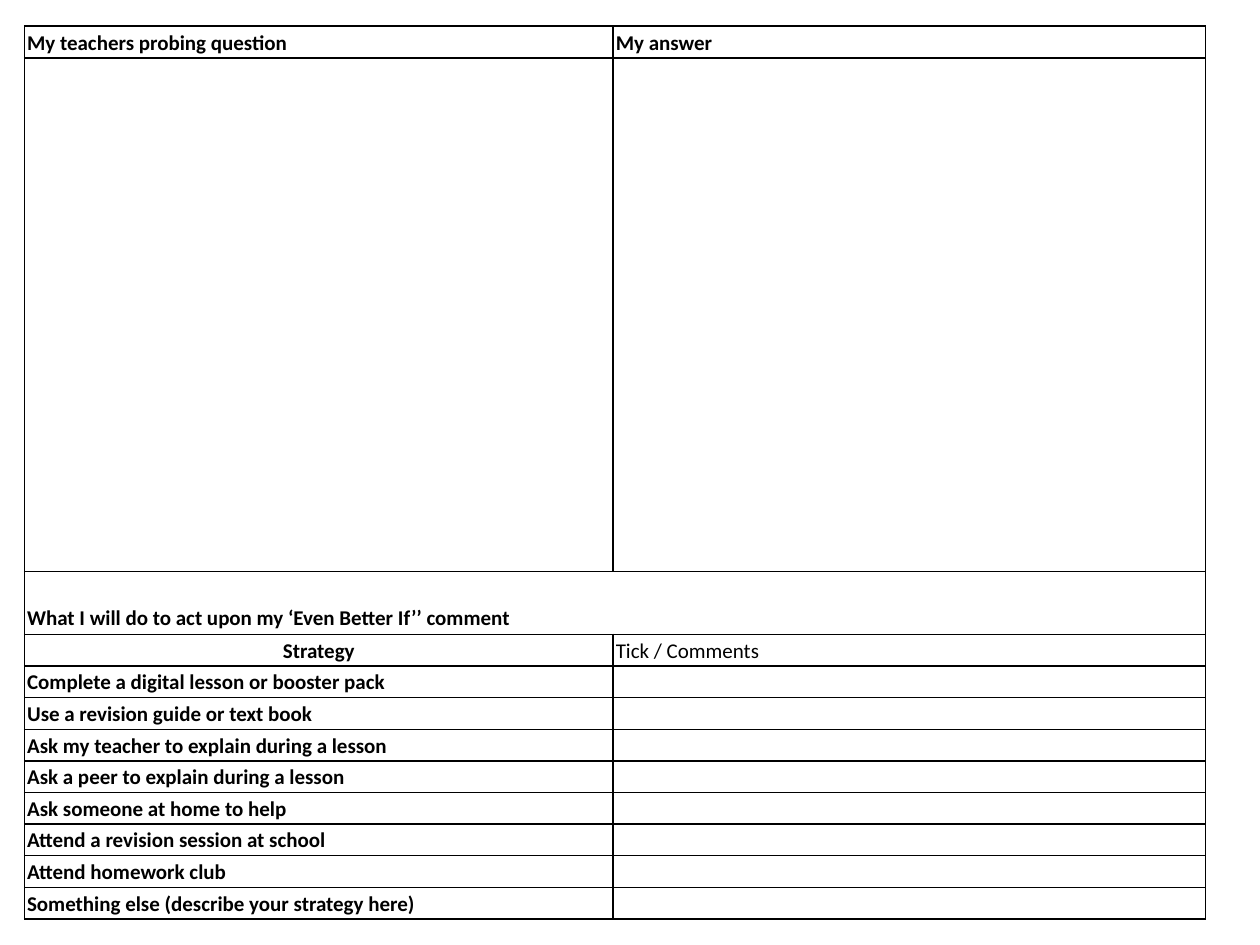
from lxml.etree import SubElement
from pptx import Presentation
from pptx.dml.color import RGBColor
from pptx.enum.text import MSO_ANCHOR as Anchor, PP_ALIGN as Align
from pptx.oxml.ns import qn
from pptx.util import Pt

BLACK = RGBColor(0, 0, 0)
FONT, SIZE = "Calibri", Pt(12)
LINE = 18.07
COLS = [336.4, 338.4]

HEADS = ["My teachers probing question", "My answer"]
TITLE = "What I will do to act upon my ‘Even Better If’’ comment"
PLANS = [
    "Complete a digital lesson or booster pack",
    "Use a revision guide or text book",
    "Ask my teacher to explain during a lesson",
    "Ask a peer to explain during a lesson",
    "Ask someone at home to help",
    "Attend a revision session at school",
    "Attend homework club",
    "Something else (describe your strategy here)",
]
ROWS = [HEADS, ["", ""], [TITLE, ""], ["Strategy", "Tick / Comments"]]
ROWS += [[plan, ""] for plan in PLANS]
HIGH = [LINE, 293.4, 2 * LINE] + [LINE] * (len(ROWS) - 3)


def set_edges(cell):
    props = cell._tc.get_or_add_tcPr()
    for tag in ("a:lnL", "a:lnR", "a:lnT", "a:lnB"):
        line = SubElement(props, qn(tag), w=str(Pt(1)))
        fill = SubElement(line, qn("a:solidFill"))
        SubElement(fill, qn("a:srgbClr"), val=str(BLACK))


def fill_cell(cell, text):
    set_edges(cell)
    cell.fill.background()
    cell.margin_left = cell.margin_right = Pt(1.5)
    cell.margin_top = cell.margin_bottom = 0
    para = cell.text_frame.paragraphs[0]
    para.line_spacing = 1.15
    if not text:
        # An empty cell takes its least height from the end mark.
        SubElement(para._p, qn("a:endParaRPr"), sz=str(int(SIZE.pt * 100)))
        return
    para.text = text
    font = para.runs[0].font
    font.name, font.size, font.bold = FONT, SIZE, True
    font.color.rgb = BLACK


def add_form(slide, left, top):
    frame = slide.shapes.add_table(len(ROWS), len(COLS), Pt(left), Pt(top),
                                   Pt(sum(COLS)), Pt(sum(HIGH)))
    table = frame.table
    table.first_row = table.horz_banding = False
    for col, width in zip(table.columns, COLS):
        col.width = Pt(width)
    for r, (row, texts) in enumerate(zip(table.rows, ROWS)):
        row.height = Pt(HIGH[r])
        for cell, text in zip(row.cells, texts):
            fill_cell(cell, text)

    title = table.cell(2, 0)
    title.merge(table.cell(2, 1))
    title.vertical_anchor = Anchor.BOTTOM
    title.margin_bottom = Pt(2)
    table.cell(3, 0).text_frame.paragraphs[0].alignment = Align.CENTER
    table.cell(3, 1).text_frame.paragraphs[0].runs[0].font.bold = False


def main():
    deck = Presentation()
    deck.slide_width, deck.slide_height = Pt(720), Pt(540)
    slide = deck.slides.add_slide(deck.slide_layouts[6])
    add_form(slide, 14, 15)
    deck.save("out.pptx")


if __name__ == "__main__":
    main()
